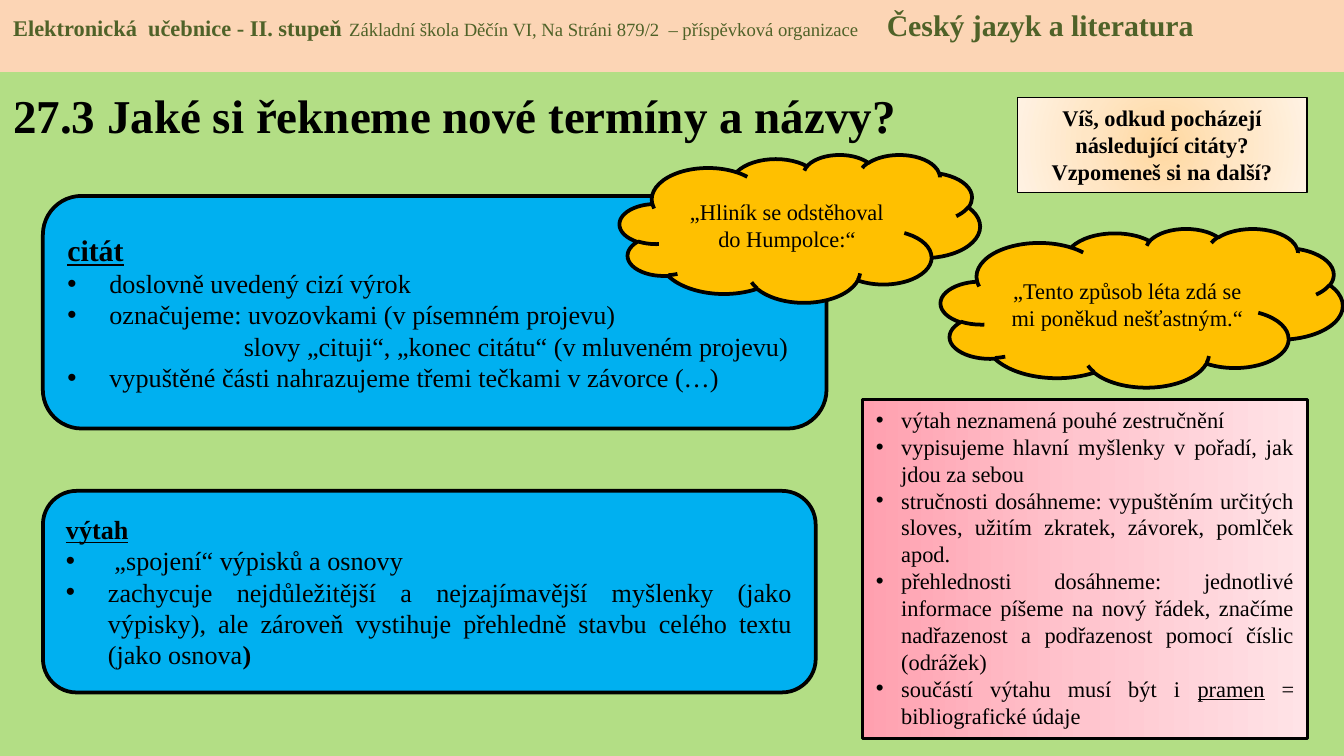
from lxml.etree import SubElement
from pptx import Presentation
from pptx.dml.color import RGBColor
from pptx.enum.shapes import MSO_SHAPE
from pptx.enum.text import MSO_ANCHOR, PP_ALIGN
from pptx.oxml.ns import qn
from pptx.util import Pt

FONT = "Times New Roman"
BLACK = "000000"
OLIVE = "4F6228"
BLUE = "00B0F0"
GOLD = "FFC000"
PINKS = ["FFA0AF", "FFC5CE", "FFE3E7"]
CREAMS = ["FFD8A0", "FFE6C5", "FFF2E3"]


def color(value):
    return RGBColor.from_string(value)


def fill_gradient(shape, colors, radial=False):
    shape.fill.background()
    properties = shape._element.spPr
    gradient = properties.makeelement(qn("a:gradFill"), {"rotWithShape": "1"})
    stops = SubElement(gradient, qn("a:gsLst"))
    for index, value in enumerate(colors):
        position = index * 100000 // (len(colors) - 1)
        stop = SubElement(stops, qn("a:gs"), pos=str(position))
        SubElement(stop, qn("a:srgbClr"), val=value)
    if radial:
        circle = SubElement(gradient, qn("a:path"), {"path": "circle"})
        edges = dict.fromkeys("ltrb", "50000")
        SubElement(circle, qn("a:fillToRect"), edges)
    else:
        SubElement(gradient, qn("a:lin"), ang="0", scaled="0")
    properties.replace(properties.find(qn("a:noFill")), gradient)


def add_box(page, kind, left, top, width, height, fill, line=0, anchor=MSO_ANCHOR.MIDDLE):
    box = page.shapes.add_shape(kind, Pt(left), Pt(top), Pt(width), Pt(height))
    box.shadow.inherit = False
    box.fill.solid()
    box.fill.fore_color.rgb = color(fill)
    if line:
        box.line.color.rgb = color(BLACK)
        box.line.width = Pt(line)
    else:
        box.line.fill.background()
    box.text_frame.word_wrap = True
    box.text_frame.vertical_anchor = anchor
    return box


def add_span(para, text, size=12, bold=False, underline=False, ink=BLACK):
    span = para.add_run()
    span.text = text
    font = span.font
    font.name = FONT
    font.size = Pt(size)
    font.bold = bold
    font.underline = underline
    font.color.rgb = color(ink)


def add_para(box, text="", align=PP_ALIGN.JUSTIFY, indent=0, bullet=False, **style):
    frame = box.text_frame
    para = frame.paragraphs[0]
    if para.runs:
        para = frame.add_paragraph()
    para.alignment = align
    properties = para._p.get_or_add_pPr()
    properties.set("marL", str(Pt(indent)))
    properties.set("indent", str(-Pt(indent) if bullet else 0))
    if bullet:
        SubElement(properties, qn("a:buFont"), typeface="Arial")
        SubElement(properties, qn("a:buChar"), char="•")
    if text:
        add_span(para, text, **style)
    return para


def add_tabs(para, positions):
    tabs = SubElement(para._p.get_or_add_pPr(), qn("a:tabLst"))
    for position in positions:
        SubElement(tabs, qn("a:tab"), pos=str(Pt(position)), algn="l")


def add_header(page):
    box = add_box(page, MSO_SHAPE.RECTANGLE, 0, 0, 720, 38.6, "FCD5B5", anchor=MSO_ANCHOR.TOP)
    para = add_para(box, "Elektronická  učebnice - II. stupeň\t", PP_ALIGN.LEFT, bold=True, ink=OLIVE)
    add_span(para, "Základní škola Děčín VI, Na Stráni 879/2  – příspěvková organizace\t", size=10, ink=OLIVE)
    add_span(para, "Český jazyk a literatura", size=16, bold=True, ink=OLIVE)
    add_tabs(para, [230, 537.5])


def add_title(page):
    box = page.shapes.add_textbox(Pt(0), Pt(38.2), Pt(500.4), Pt(46.8))
    box.text_frame.word_wrap = True
    box.text_frame.vertical_anchor = MSO_ANCHOR.MIDDLE
    add_para(box, "27.3 Jaké si řekneme nové termíny a názvy?", PP_ALIGN.LEFT, size=25.2, bold=True)


def add_quotation(page):
    box = add_box(page, MSO_SHAPE.ROUNDED_RECTANGLE, 23, 105, 419.8, 124.6, BLUE, 2)
    add_para(box, "citát", size=16, bold=True, underline=True)
    item = {"indent": 22.5, "bullet": True, "size": 14}
    add_para(box, "doslovně uvedený cizí výrok", **item)
    add_para(box, "označujeme: uvozovkami (v písemném projevu)", **item)
    add_para(box, "slovy „cituji“, „konec citátu“ (v mluveném projevu)", indent=94.5, size=14)
    add_para(box, "vypuštěné části nahrazujeme třemi tečkami v závorce (…)", **item)


def add_abstract(page):
    box = add_box(page, MSO_SHAPE.ROUNDED_RECTANGLE, 23, 263, 414, 108, BLUE, 2)
    add_para(box, "výtah", size=14, bold=True, underline=True)
    item = {"indent": 22.5, "bullet": True, "size": 14}
    add_para(box, " „spojení“ výpisků a osnovy", **item)
    para = add_para(
        box,
        "zachycuje nejdůležitější a nejzajímavější myšlenky (jako výpisky), "
        "ale zároveň vystihuje přehledně stavbu celého textu (jako osnova",
        **item,
    )
    add_span(para, ")", size=14, bold=True)


def add_rules(page):
    box = add_box(page, MSO_SHAPE.RECTANGLE, 462.2, 214, 238.2, 181.5, PINKS[0], 1.5, MSO_ANCHOR.TOP)
    fill_gradient(box, PINKS)
    for text in (
        "výtah neznamená pouhé zestručnění",
        "vypisujeme hlavní myšlenky v pořadí, jak jdou za sebou",
        "stručnosti dosáhneme: vypuštěním určitých sloves, užitím zkratek, závorek, pomlček apod.",
        "přehlednosti dosáhneme: jednotlivé informace píšeme na nový řádek, "
        "značíme nadřazenost a podřazenost pomocí číslic (odrážek)",
        "součástí výtahu musí být i ",
    ):
        para = add_para(box, text, indent=13.5, bullet=True)
    add_span(para, "pramen", underline=True)
    add_span(para, " = bibliografické údaje")


def add_cloud(page, left, top, width, height, text):
    box = add_box(page, MSO_SHAPE.CLOUD, left, top, width, height, GOLD, 2)
    add_para(box, text, PP_ALIGN.CENTER)


def add_question(page):
    box = add_box(page, MSO_SHAPE.RECTANGLE, 545, 52.3, 155.2, 51, CREAMS[0], 0.75, MSO_ANCHOR.TOP)
    fill_gradient(box, CREAMS, radial=True)
    for text in ("Víš, odkud pocházejí následující citáty?", "Vzpomeneš si na další?"):
        add_para(box, text, PP_ALIGN.CENTER, bold=True)


def main():
    deck = Presentation()
    deck.slide_width, deck.slide_height = Pt(720), Pt(405)
    page = deck.slides.add_slide(deck.slide_layouts[6])
    page.background.fill.solid()
    page.background.fill.fore_color.rgb = color("B3DE85")
    add_title(page)
    add_header(page)
    add_quotation(page)
    add_abstract(page)
    add_rules(page)
    add_cloud(page, 332, 82.8, 193, 79.2, "„Hliník se odstěhoval do Humpolce:“")
    add_cloud(page, 504, 122.4, 215.3, 85, "„Tento způsob léta zdá se mi poněkud nešťastným.“")
    add_question(page)
    deck.save("out.pptx")


if __name__ == "__main__":
    main()
